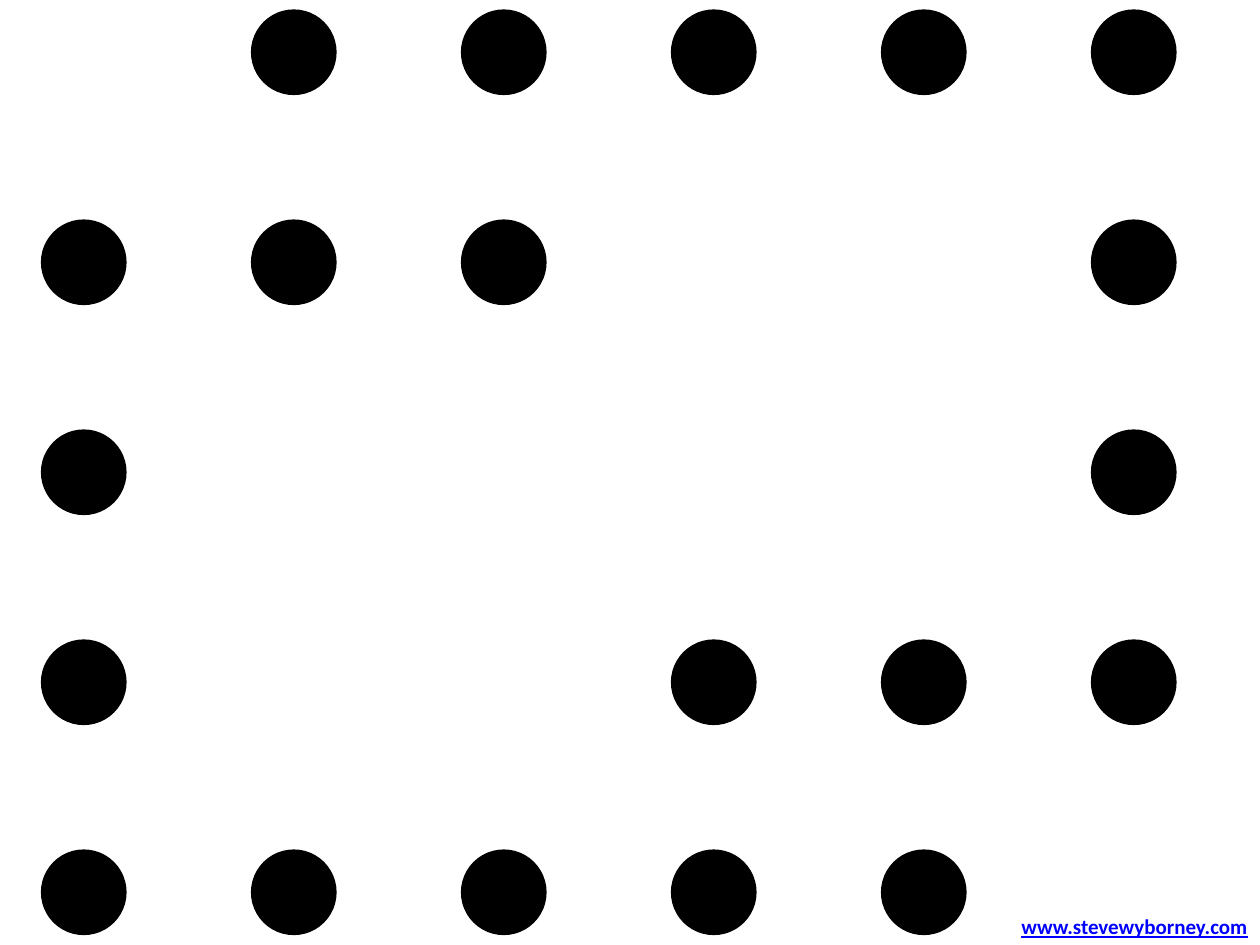
from pptx import Presentation
from pptx.dml.color import RGBColor
from pptx.enum.shapes import MSO_SHAPE
from pptx.enum.text import MSO_AUTO_SIZE, PP_ALIGN
from pptx.util import Inches, Pt

# Content: each "o" is a dot on the grid
DOT_ROWS = [
    ".ooooo",
    "ooo..o",
    "o....o",
    "o..ooo",
    "ooooo.",
]
WEB_ADDRESS = "www.stevewyborney.com"

COLORS = {"dot": "000000", "link": "0000FF"}
DOT_SIZE = 0.67
GRID_LEFT, GRID_TOP = 0.33, 0.08
GRID_STEP = 5 / 3


def add_dot(slide, left, top):
    dot = slide.shapes.add_shape(
        MSO_SHAPE.OVAL, Inches(left), Inches(top), Inches(DOT_SIZE), Inches(DOT_SIZE)
    )
    dot.shadow.inherit = False
    black = RGBColor.from_string(COLORS["dot"])
    dot.fill.solid()
    dot.fill.fore_color.rgb = black
    dot.line.color.rgb = black
    dot.line.width = Pt(0.75)


def add_text(slide, text, left, top, width, height, *, size, color,
             bold=False, underline=False, align=PP_ALIGN.LEFT):
    box = slide.shapes.add_textbox(Inches(left), Inches(top), Inches(width), Inches(height))
    frame = box.text_frame
    frame.word_wrap = False
    frame.auto_size = MSO_AUTO_SIZE.SHAPE_TO_FIT_TEXT
    paragraph = frame.paragraphs[0]
    paragraph.alignment = align
    run = paragraph.add_run()
    run.text = text
    run.font.name = "Calibri"
    run.font.size = Pt(size)
    run.font.bold = bold
    run.font.underline = underline
    run.font.color.rgb = RGBColor.from_string(color)


def main():
    deck = Presentation()
    deck.slide_width, deck.slide_height = Inches(10), Inches(7.5)
    slide = deck.slides.add_slide(deck.slide_layouts[6])

    # Dot grid
    for row, pattern in enumerate(DOT_ROWS):
        for column, mark in enumerate(pattern):
            if mark == "o":
                add_dot(slide, GRID_LEFT + column * GRID_STEP, GRID_TOP + row * GRID_STEP)

    # Web address in the bottom right corner
    add_text(slide, WEB_ADDRESS, 7.98, 7.2, 2.02, 0.3, size=12, color=COLORS["link"],
             bold=True, underline=True, align=PP_ALIGN.RIGHT)

    deck.save("out.pptx")


if __name__ == "__main__":
    main()
